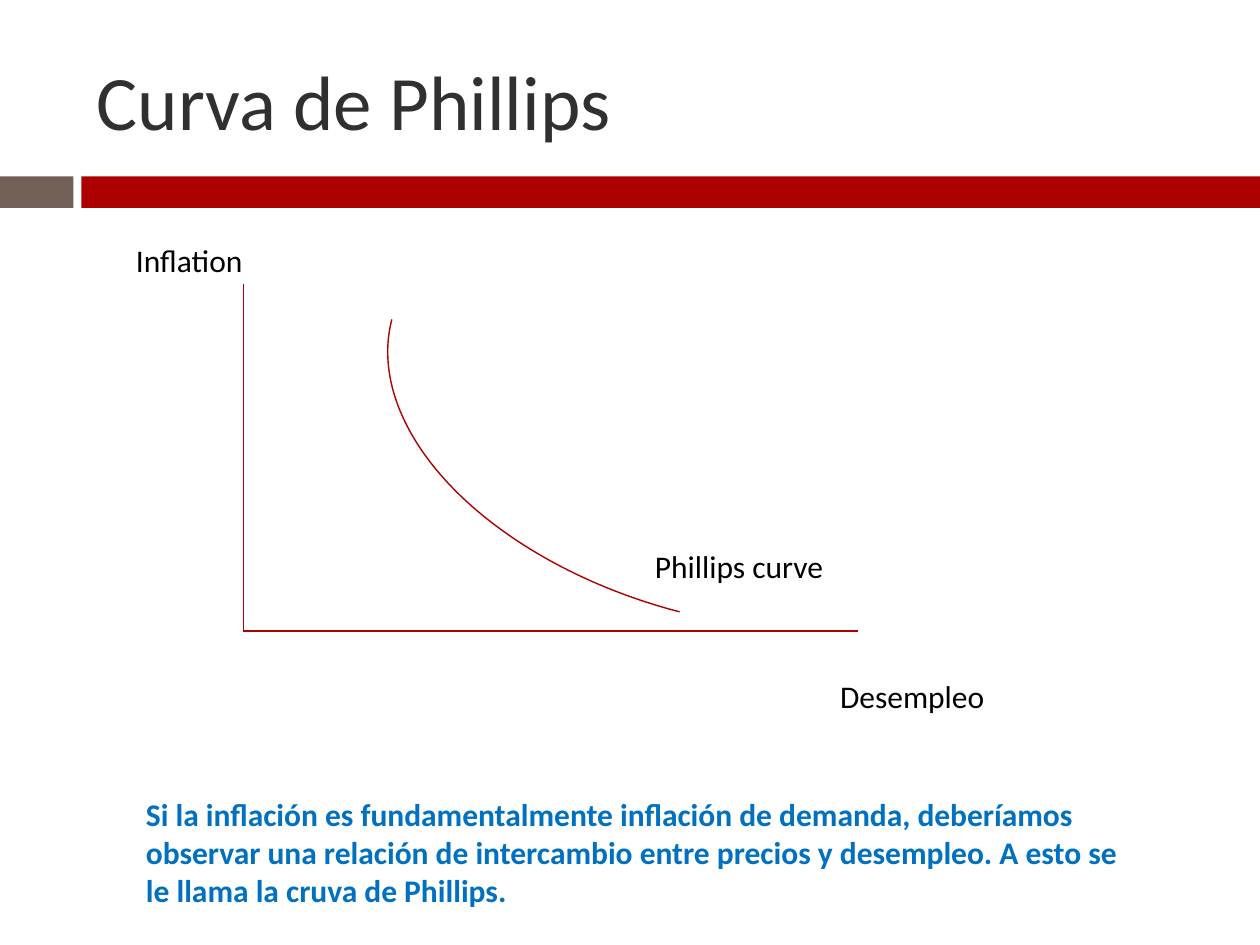
from dataclasses import dataclass

from lxml import etree
from pptx import Presentation
from pptx.dml.color import RGBColor
from pptx.enum.shapes import MSO_CONNECTOR, MSO_SHAPE
from pptx.enum.text import MSO_ANCHOR, MSO_AUTO_SIZE, PP_ALIGN
from pptx.oxml.ns import qn
from pptx.util import Pt

RECTANGLE, ARC = MSO_SHAPE.RECTANGLE, MSO_SHAPE.ARC
STRAIGHT = MSO_CONNECTOR.STRAIGHT
TOP, MIDDLE, BOTTOM = MSO_ANCHOR.TOP, MSO_ANCHOR.MIDDLE, MSO_ANCHOR.BOTTOM
LEFT = PP_ALIGN.LEFT
NO_AUTO_SIZE = MSO_AUTO_SIZE.NONE
TITLE_ONLY = 5


@dataclass(frozen=True)
class Theme:
    font: str = "Calibri"
    title_size: float = 44
    text_size: float = 18
    line_width: float = 0.79
    title: RGBColor = RGBColor.from_string("303030")
    text: RGBColor = RGBColor.from_string("000000")
    note: RGBColor = RGBColor.from_string("0070C0")
    accent: RGBColor = RGBColor.from_string("AD0101")
    brown: RGBColor = RGBColor.from_string("726056")


class SlideBuilder:
    """Holds the theme and the current slide; lengths are in points."""

    def __init__(self, slide, theme):
        self.slide = slide
        self.theme = theme

    def fill_text(self, shape, text, size, color, anchor, bold=False):
        frame = shape.text_frame
        frame_format = {"word_wrap": True, "auto_size": NO_AUTO_SIZE,
                        "vertical_anchor": anchor}
        for name, value in frame_format.items():
            setattr(frame, name, value)
        paragraph = frame.paragraphs[0]
        paragraph.alignment = LEFT
        run = paragraph.add_run()
        run.text = text
        font_format = {"name": self.theme.font, "size": Pt(size), "bold": bold}
        for name, value in font_format.items():
            setattr(run.font, name, value)
        run.font.color.rgb = color

    def title(self, text, left, top, width, height):
        shape = self.slide.shapes.title
        position = {"left": left, "top": top, "width": width, "height": height}
        for name, value in position.items():
            setattr(shape, name, Pt(value))
        self.fill_text(shape, text, self.theme.title_size, self.theme.title, MIDDLE)

    def text(self, text, left, top, width, height, color, anchor=TOP, bold=False):
        box = self.slide.shapes.add_textbox(Pt(left), Pt(top), Pt(width), Pt(height))
        self.fill_text(box, text, self.theme.text_size, color, anchor, bold)

    def bar(self, left, top, width, height, color):
        shape = self.slide.shapes.add_shape(
            RECTANGLE, Pt(left), Pt(top), Pt(width), Pt(height))
        shape.shadow.inherit = False
        shape.fill.solid()
        shape.fill.fore_color.rgb = color
        shape.line.fill.background()

    def outline(self, line):
        line.color.rgb = self.theme.accent
        line.width = Pt(self.theme.line_width)

    def axis(self, start, end):
        connector = self.slide.shapes.add_connector(
            STRAIGHT, *(Pt(value) for value in (*start, *end)))
        self.outline(connector.line)
        etree.SubElement(connector.element.spPr, qn("a:effectLst"))

    def curve(self, left, top, width, height, rotation):
        shape = self.slide.shapes.add_shape(
            ARC, Pt(left), Pt(top), Pt(width), Pt(height))
        shape.rotation = rotation
        shape.shadow.inherit = False
        shape.fill.background()
        self.outline(shape.line)


def main():
    presentation = Presentation()
    presentation.slide_width, presentation.slide_height = Pt(720), Pt(540)
    theme = Theme()
    slide = presentation.slides.add_slide(presentation.slide_layouts[TITLE_ONLY])
    builder = SlideBuilder(slide, theme)

    # Title and the two-part band under it
    band_top, band_height, band_split = 100.8, 18, 46.5
    builder.bar(0, band_top, 42, band_height, theme.brown)
    builder.bar(band_split, band_top, 720 - band_split, band_height, theme.accent)
    builder.title("Curva de Phillips", 48, 18, 642, 78)

    # Axes meeting at the origin, and the curve
    origin_x, origin_y = 139, 360.7
    builder.axis((origin_x, 162), (origin_x, origin_y))
    builder.axis((origin_x, origin_y), (490.3, origin_y))
    builder.curve(217.4, 113, 402.5, 240.5, 194.6)

    # Labels of the axes and the curve
    labels = [
        ("Inflation", 70.6, 134, 79),
        ("Desempleo", 473, 383.3, 124.6),
        ("Phillips curve", 367.2, 309, 134.6),
    ]
    for text, left, top, width in labels:
        builder.text(text, left, top, width, 29, theme.text)

    # Explanation
    builder.text(
        "Si la inflación es fundamentalmente inflación de demanda, deberíamos "
        "observar una relación de intercambio entre precios y desempleo. "
        "A esto se le llama la cruva de Phillips.",
        76.3, 428.4, 584, 94.4, theme.note, anchor=BOTTOM, bold=True)

    presentation.save("out.pptx")


if __name__ == "__main__":
    main()
